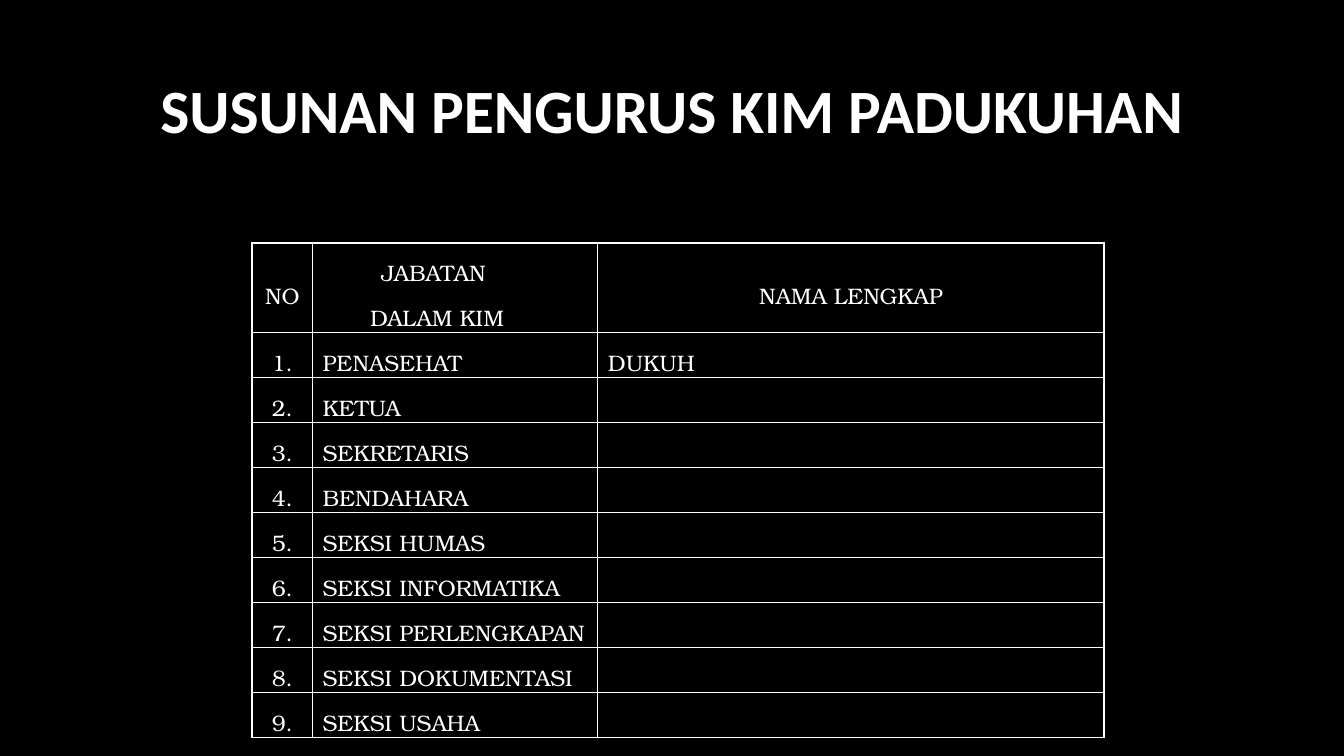
from lxml import etree
from pptx import Presentation
from pptx import util as u
from pptx.dml.color import RGBColor
from pptx.enum import text as t
from pptx.oxml import ns

TITLE = "SUSUNAN PENGURUS KIM PADUKUHAN"
HEAD = ["NO", "JABATAN \nDALAM KIM", "NAMA LENGKAP"]
POSTS = [
    ("PENASEHAT", "DUKUH"),
    ("KETUA", ""),
    ("SEKRETARIS", ""),
    ("BENDAHARA", ""),
    ("SEKSI HUMAS", ""),
    ("SEKSI INFORMATIKA", ""),
    ("SEKSI PERLENGKAPAN", ""),
    ("SEKSI DOKUMENTASI", ""),
    ("SEKSI USAHA", ""),
]
ROWS = [HEAD] + [[f"{n}.", *post] for n, post in enumerate(POSTS, 1)]
COLS = [0.6, 2.83, 5.02]
HEAD_PADS = [(0.05, 0.05), (0.1, 0.46), (0.19, 0.19)]
BODY_PADS = [(0, 0), (0.1, 0), (0.1, 0)]
LEFT, TOP, TALL = 2.5, 2.41, 4.91
ROW = TALL / (len(ROWS) + 1)
BLACK = RGBColor(0, 0, 0)
WHITE = RGBColor(255, 255, 255)


def style(font, name, size, bold=False):
    font.name, font.size, font.bold = name, u.Pt(size), bold
    font.color.rgb = WHITE


def border(cell):
    props = cell._tc.get_or_add_tcPr()
    for spot, side in enumerate(("lnL", "lnR", "lnT", "lnB")):
        line = etree.Element(ns.qn(f"a:{side}"), w=str(u.Pt(1)))
        fill = etree.SubElement(line, ns.qn("a:solidFill"))
        etree.SubElement(fill, ns.qn("a:srgbClr"), val=str(WHITE))
        props.insert(spot, line)


def write(cell, words, pads, align):
    cell.margin_left = cell.margin_right = 0
    cell.margin_top = cell.margin_bottom = 0
    cell.vertical_anchor = t.MSO_ANCHOR.MIDDLE
    cell.fill.background()
    border(cell)
    cell.text_frame.text = words
    for para in cell.text_frame.paragraphs:
        para.alignment = align
        if words:
            para.line_spacing = 1.5
            para.space_before = u.Pt(0.1)
        props = para._p.get_or_add_pPr()
        for key, pad in zip(("marL", "marR"), pads):
            props.set(key, str(u.Inches(pad)))
        props.set("indent", "0")
        for run in para.runs:
            style(run.font, "TeX Gyre Bonum", 16)


deck = Presentation()
deck.slide_width, deck.slide_height = u.Inches(13.33), u.Inches(7.5)
slide = deck.slides.add_slide(deck.slide_layouts[6])
slide.background.fill.solid()
slide.background.fill.fore_color.rgb = BLACK

box = slide.shapes.add_textbox(*map(u.Inches, (0.92, 0.4, 11.5, 1.45)))
frame = box.text_frame
frame.word_wrap = True
frame.vertical_anchor = t.MSO_ANCHOR.MIDDLE
frame.text = TITLE
para = frame.paragraphs[0]
para.alignment = t.PP_ALIGN.CENTER
para.line_spacing = 0.9
style(para.runs[0].font, "Calibri", 44, True)

size = (LEFT, TOP, sum(COLS), TALL)
table = slide.shapes.add_table(len(ROWS), len(COLS), *map(u.Inches, size)).table
table.first_row = table.horz_banding = False
for col, wide in zip(table.columns, COLS):
    col.width = u.Inches(wide)
for r, row in enumerate(ROWS):
    table.rows[r].height = u.Inches(ROW if r else 2 * ROW)
    for c, words in enumerate(row):
        pads = BODY_PADS[c] if r else HEAD_PADS[c]
        align = t.PP_ALIGN.LEFT if r and c else t.PP_ALIGN.CENTER
        write(table.cell(r, c), words, pads, align)

deck.save("out.pptx")
